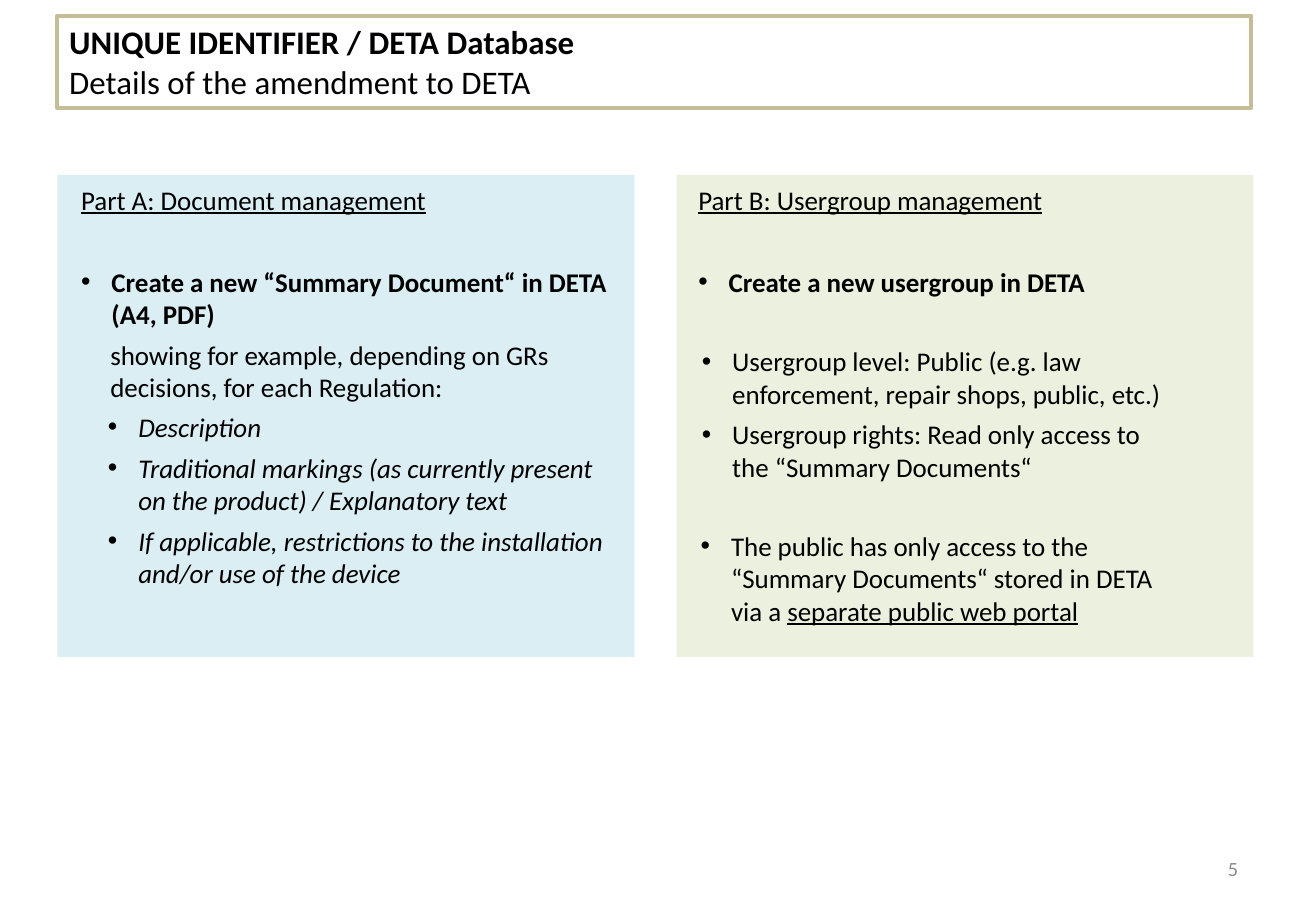
"""Build the slide on the amendment to the DETA database."""
from pptx import Presentation
from pptx import util as u
from pptx.dml import color
from pptx.enum import shapes, text
from pptx.oxml import ns
from lxml import etree

Pt = u.Pt
BLACK = color.RGBColor(0x00, 0x00, 0x00)
GREY = color.RGBColor(0x8C, 0x8C, 0x8C)
TAN = color.RGBColor(0xC4, 0xBD, 0x97)
BLUE = color.RGBColor(0xDB, 0xEE, 0xF4)
GREEN = color.RGBColor(0xEB, 0xF1, 0xDE)
FONT = "Calibri"
HANG = 18
SUB_INDENT = 47.5
GAP = 4.9
SECTION_GAP = 29.3


def style(r, size=16, rgb=BLACK, bold=False, italic=False, underline=False):
    """Set the font of one run."""
    f = r.font
    f.name, f.size, f.color.rgb = FONT, Pt(size), rgb
    f.bold, f.italic, f.underline = bold, italic, underline


def add_title(s, box, lines):
    """Frame the title placeholder and fill it with (line, bold) pairs."""
    sp = s.shapes.title
    sp.left, sp.top, sp.width, sp.height = map(Pt, box)
    sp.line.color.rgb = TAN
    sp.line.width = Pt(2.25)
    tf = sp.text_frame
    tf.auto_size = text.MSO_AUTO_SIZE.NONE
    tf.vertical_anchor = text.MSO_ANCHOR.TOP
    tf.text = "\n".join(line for line, _ in lines)
    for p, (_, bold) in zip(tf.paragraphs, lines):
        p.alignment = text.PP_ALIGN.LEFT
        style(p.runs[0], 19.5, bold=bold)


def add_panel(s, left, fill):
    """Draw one coloured panel."""
    sp = s.shapes.add_shape(shapes.MSO_SHAPE.RECTANGLE,
                            Pt(left), Pt(103.7), Pt(342), Pt(285.8))
    sp.shadow.inherit = False
    sp.fill.solid()
    sp.fill.fore_color.rgb = fill
    sp.line.fill.background()


def add_text(s, box):
    """Add an empty wrapping text box and return its frame."""
    tf = s.shapes.add_textbox(*map(Pt, box)).text_frame
    tf.word_wrap = True
    return tf


def add_para(tf, words, indent=0, bullet=False, before=GAP, **look):
    """Fill the first empty paragraph or append one, with an optional bullet."""
    first = not tf.text
    p = tf.paragraphs[0] if first else tf.add_paragraph()
    pPr = p._p.get_or_add_pPr()
    pPr.set("marL", str(Pt(indent)))
    pPr.set("indent", str(Pt(-HANG if bullet else 0)))
    if bullet:
        etree.SubElement(pPr, ns.qn("a:buFont")).set("typeface", "Arial")
        etree.SubElement(pPr, ns.qn("a:buChar")).set("char", "•")
    p.space_before = Pt(0 if first else before)
    p.text = words
    for r in p.runs:
        style(r, **look)
    return p


def add_heading(s, box, heading, task):
    """Add a panel's underlined heading and its bold task."""
    tf = add_text(s, box)
    add_para(tf, heading, underline=True)
    add_para(tf, task, HANG, True, SECTION_GAP, bold=True)
    return tf


def add_sub_bullets(s, box, items, **look):
    """Add a box of indented bullets and return its last paragraph."""
    tf = add_text(s, box)
    for item in items:
        p = add_para(tf, item, SUB_INDENT, True, **look)
    return p


def main():
    """Compose and save the slide."""
    prs = Presentation()
    prs.slide_width, prs.slide_height = Pt(780), Pt(540)
    s = prs.slides.add_slide(prs.slide_layouts[5])
    add_title(s, (33.8, 9.4, 707.8, 54.7),
              [("UNIQUE IDENTIFIER / DETA Database", True),
               ("Details of the amendment to DETA", False)])

    add_panel(s, 34, BLUE)
    tf = add_heading(s, (41, 105.1, 327.6, 139), "Part A: Document management",
                     "Create a new “Summary Document“ in DETA (A4, PDF)")
    add_para(tf, "showing for example, depending on GRs decisions, "
                 "for each Regulation:", 17.3)
    add_sub_bullets(s, (27.4, 239.8, 341.3, 114.5), [
        "Description",
        "Traditional markings (as currently present on the product) / "
        "Explanatory text",
        "If applicable, restrictions to the installation and/or use of the device",
    ], italic=True)

    add_panel(s, 401, GREEN)
    add_heading(s, (406.8, 105.1, 322.6, 75.6), "Part B: Usergroup management",
                "Create a new usergroup in DETA")
    add_sub_bullets(s, (379.4, 200.9, 327.6, 90), [
        "Usergroup level: Public (e.g. law enforcement, repair shops, public, etc.)",
        "Usergroup rights: Read only access to the “Summary Documents“",
    ])
    p = add_sub_bullets(s, (378.7, 310.3, 327.6, 65.5), [
        "The public has only access to the “Summary Documents“ stored in DETA"
        "\vvia a "])
    r = p.add_run()
    r.text = "separate public web portal"
    style(r, underline=True)

    tf = add_text(s, (558.7, 500.4, 182.2, 28.8))
    tf.vertical_anchor = text.MSO_ANCHOR.MIDDLE
    p = add_para(tf, "5", size=12, rgb=GREY)
    p.alignment = text.PP_ALIGN.RIGHT

    prs.save("out.pptx")


if __name__ == "__main__":
    main()
